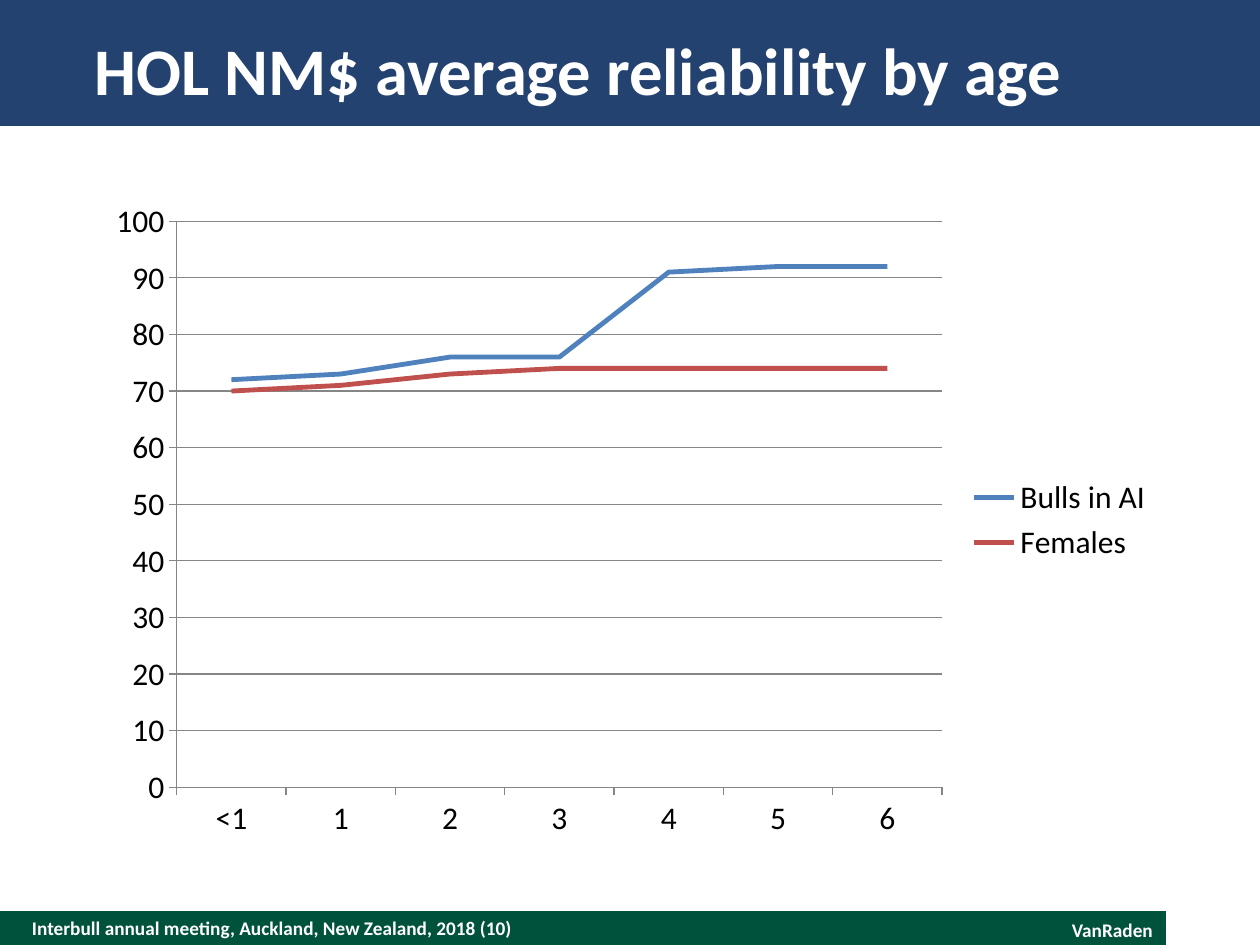
from pptx import Presentation
from pptx.chart.data import CategoryChartData
from pptx.dml.color import RGBColor
from pptx.enum.chart import XL_CHART_TYPE as ChartType, XL_LEGEND_POSITION as LegendPosition
from pptx.enum.chart import XL_TICK_MARK as TickMark
from pptx.enum.shapes import MSO_SHAPE as Shape
from pptx.enum.text import MSO_ANCHOR as Anchor, PP_ALIGN as Align
from pptx.util import Emu, Pt

FONT = "Calibri"
WHITE, BLACK, GRAY = "FFFFFF", "000000", "868686"
TITLE = "HOL NM$ average reliability by age"
TITLE_BOX = (95, 25, 1071, 88)
BANDS = [
    ((0, 911, 1166, 34), "00523C"),
    ((0, 0, 1260, 126), "244270"),
]
FOOTERS = [
    ("Interbull annual meeting, Auckland, New Zealand, 2018 (10)", (32, 911, 819, 34), Align.LEFT, 0),
    ("VanRaden", (914, 911, 252, 37), Align.RIGHT, 13),
]
CHART_BOX = (95, 189, 1071, 662)
AGES = ["<1", "1", "2", "3", "4", "5", "6"]
SERIES = [
    ("Bulls in AI", [72, 73, 76, 76, 91, 92, 92], "4F81BD"),
    ("Females", [70, 71, 73, 74, 74, 74, 74], "C0504D"),
]


def px(length):
    return Emu(round(length * 914400 / 126))


def box(lengths):
    return [px(length) for length in lengths]


def color(value):
    return RGBColor.from_string(value)


def style_font(font, size, value, bold=False):
    font.name = FONT
    font.size = Pt(size)
    font.bold = bold
    font.color.rgb = color(value)


def set_text(shape, text, size, align, side_margin=0):
    frame = shape.text_frame
    frame.text = text
    frame.word_wrap = True
    frame.vertical_anchor = Anchor.MIDDLE
    frame.margin_top = frame.margin_bottom = 0
    frame.margin_left = frame.margin_right = px(side_margin)
    paragraph = frame.paragraphs[0]
    paragraph.alignment = align
    style_font(paragraph.runs[0].font, size, WHITE, True)


def add_band(slide, lengths, fill):
    band = slide.shapes.add_shape(Shape.RECTANGLE, *box(lengths))
    band.shadow.inherit = False
    band.fill.solid()
    band.fill.fore_color.rgb = color(fill)
    band.line.fill.background()


def add_title(slide):
    title = slide.shapes.title
    title.left, title.top, title.width, title.height = box(TITLE_BOX)
    set_text(title, TITLE, 38, Align.LEFT)
    slide.shapes.element.append(title.element)


def add_reliability_chart(slide):
    data = CategoryChartData()
    data.categories = AGES
    for name, values, _ in SERIES:
        data.add_series(name, values)
    chart = slide.shapes.add_chart(ChartType.LINE, *box(CHART_BOX), data).chart
    style_font(chart.font, 18, BLACK)
    chart.has_title = False
    chart.has_legend = True
    chart.legend.position = LegendPosition.RIGHT
    chart.legend.include_in_layout = False
    chart.plots[0].vary_by_categories = False
    for series, (_, _, line_color) in zip(chart.plots[0].series, SERIES):
        series.smooth = False
        series.format.line.width = Pt(2.75)
        series.format.line.color.rgb = color(line_color)
    value_axis = chart.value_axis
    value_axis.minimum_scale, value_axis.maximum_scale = 0, 100
    value_axis.major_unit = 10
    value_axis.has_major_gridlines = True
    for axis in (chart.category_axis, value_axis):
        axis.major_tick_mark = TickMark.OUTSIDE
        axis.minor_tick_mark = TickMark.NONE
    for part in (chart.category_axis, value_axis, value_axis.major_gridlines):
        part.format.line.width = Pt(0.75)
        part.format.line.color.rgb = color(GRAY)


def main():
    presentation = Presentation()
    presentation.slide_width, presentation.slide_height = box((1260, 945))
    slide = presentation.slides.add_slide(presentation.slide_layouts[5])
    for lengths, fill in BANDS:
        add_band(slide, lengths, fill)
    for text, lengths, align, side_margin in FOOTERS:
        footer = slide.shapes.add_textbox(*box(lengths))
        set_text(footer, text, 11, align, side_margin)
    add_title(slide)
    add_reliability_chart(slide)
    presentation.save("out.pptx")


if __name__ == "__main__":
    main()
